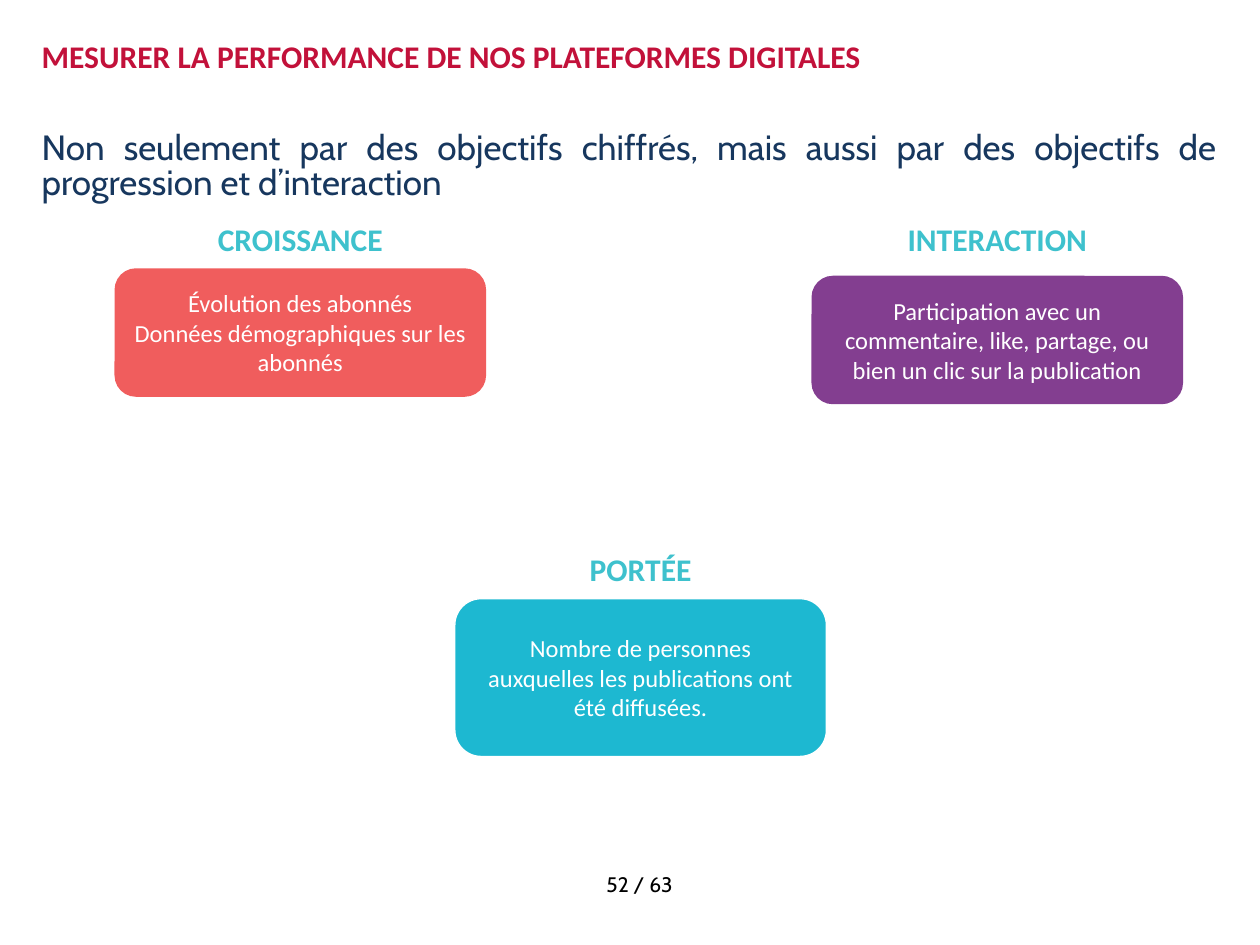
import pptx
import pptx.dml.color
import pptx.enum.shapes
import pptx.enum.text
import pptx.util

Cm = pptx.util.Cm
Pt = pptx.util.Pt
RGBColor = pptx.dml.color.RGBColor
Align = pptx.enum.text.PP_ALIGN
Anchor = pptx.enum.text.MSO_ANCHOR
AutoSize = pptx.enum.text.MSO_AUTO_SIZE
ShapeType = pptx.enum.shapes.MSO_SHAPE

WHITE = RGBColor(0xFF, 0xFF, 0xFF)
BLACK = RGBColor(0x00, 0x00, 0x00)
NAVY = RGBColor(0x17, 0x37, 0x5E)
CRIMSON = RGBColor(0xC2, 0x11, 0x3A)
TURQUOISE = RGBColor(0x3E, 0xC1, 0xCD)
CORAL = RGBColor(0xF0, 0x5D, 0x5D)
PURPLE = RGBColor(0x83, 0x3E, 0x90)
CYAN = RGBColor(0x1D, 0xB8, 0xD1)

MARGIN = Cm(0.84)
CONTENT_WIDTH = Cm(23.7)
CARD_WIDTH = Cm(7.49)
LABEL_WIDTH = Cm(5.64)
LABEL_HEIGHT = Cm(1.09)

# label, label top, card left, card top, card height, card colour, card text
METRICS = [
    ("CROISSANCE", 4.32, 2.31, 5.41, 2.59, CORAL,
     "Évolution des abonnés\nDonnées démographiques sur les abonnés"),
    ("INTERACTION", 4.32, 16.36, 5.56, 2.59, PURPLE,
     "Participation avec un commentaire, like, partage, "
     "ou bien un clic sur la publication"),
    ("PORTÉE", 10.97, 9.17, 12.07, 3.18, CYAN,
     "Nombre de personnes auxquelles les publications ont été diffusées."),
]


class SlideBuilder:
    heading_font = "Calibri"
    body_font = "Cabin"

    def __init__(self, slide):
        self.slide = slide

    def set_text(self, shape, text, font, size, color, bold=False,
                 align=Align.CENTER, anchor=Anchor.TOP, inset=True):
        """Fill the shape with text, all of it in one style."""
        frame = shape.text_frame
        frame.text = text
        frame.word_wrap = True
        frame.auto_size = AutoSize.NONE
        frame.vertical_anchor = anchor
        if not inset:
            frame.margin_left = frame.margin_right = 0
            frame.margin_top = frame.margin_bottom = 0
        for paragraph in frame.paragraphs:
            paragraph.alignment = align
            for run in paragraph.runs:
                run.font.name = font
                run.font.size = Pt(size)
                run.font.bold = bold
                run.font.color.rgb = color

    def title(self, text):
        title = self.slide.shapes.title
        title.left, title.top = MARGIN, Cm(0.74)
        title.width, title.height = CONTENT_WIDTH, Cm(1.93)
        self.set_text(title, text, self.heading_font, 18, CRIMSON, bold=True,
                      align=Align.LEFT, inset=False)

    def filled_shape(self, kind, left, top, width, height, color):
        shape = self.slide.shapes.add_shape(kind, left, top, width, height)
        shape.shadow.inherit = False
        shape.fill.solid()
        shape.fill.fore_color.rgb = color
        shape.line.fill.background()
        return shape

    def introduction(self, text):
        panel = self.filled_shape(ShapeType.RECTANGLE, MARGIN, Cm(2.67),
                                  CONTENT_WIDTH, Cm(12.98), WHITE)
        self.set_text(panel, text, self.body_font, 20, NAVY,
                      align=Align.JUSTIFY, inset=False)
        paragraph = panel.text_frame.paragraphs[0]
        paragraph.line_spacing = Pt(20)
        paragraph.space_after = Pt(12)

    def label(self, text, left, top):
        box = self.slide.shapes.add_textbox(left, top, LABEL_WIDTH, LABEL_HEIGHT)
        self.set_text(box, text, self.heading_font, 18, TURQUOISE, bold=True)

    def card(self, text, left, top, height, color):
        card = self.filled_shape(ShapeType.ROUNDED_RECTANGLE, left, top,
                                 CARD_WIDTH, height, color)
        self.set_text(card, text, self.heading_font, 14, WHITE,
                      anchor=Anchor.MIDDLE)
        return card

    def page_number(self, text):
        box = self.slide.shapes.add_textbox(Cm(11.13), Cm(17.45), Cm(3.53), Cm(0.79))
        self.set_text(box, text, self.body_font, 12, BLACK)


def main():
    presentation = pptx.Presentation()
    presentation.slide_width = Cm(25.4)
    presentation.slide_height = Cm(19.05)
    title_only = presentation.slide_layouts[5]
    builder = SlideBuilder(presentation.slides.add_slide(title_only))

    builder.title("MESURER LA PERFORMANCE DE NOS PLATEFORMES DIGITALES")
    builder.introduction("Non seulement par des objectifs chiffrés, mais aussi par "
                         "des objectifs de progression et d’interaction")
    label_offset = (CARD_WIDTH - LABEL_WIDTH) // 2
    for label, label_top, left, top, height, color, text in METRICS:
        builder.label(label, Cm(left) + label_offset, Cm(label_top))
        card = builder.card(text, Cm(left), Cm(top), Cm(height), color)
    # Only the last card is outlined.
    card.line.color.rgb = WHITE
    card.line.width = Pt(0.75)
    builder.page_number("52 / 63")

    presentation.save("out.pptx")


if __name__ == "__main__":
    main()
